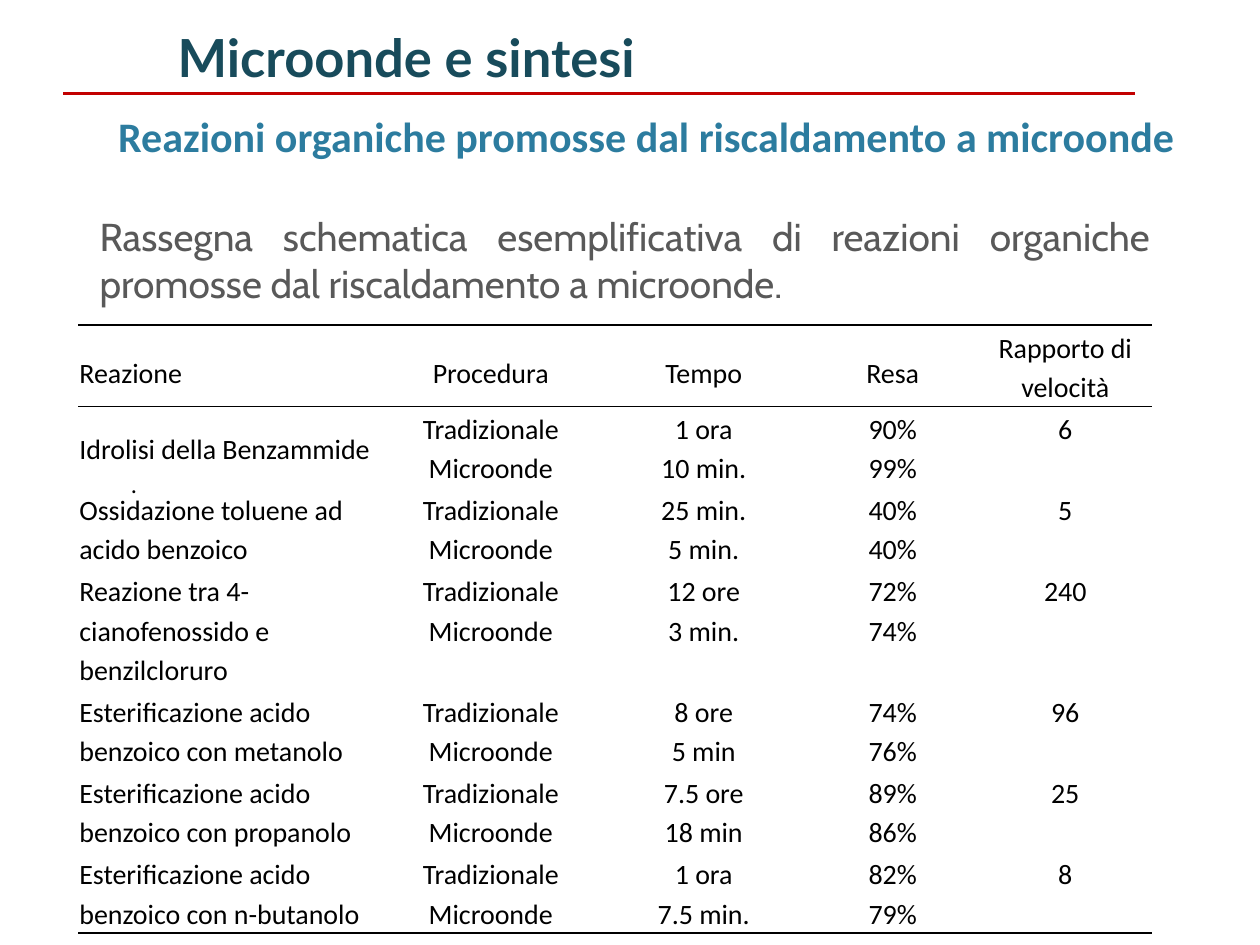
from lxml import etree
from pptx import Presentation
from pptx.dml.color import RGBColor
from pptx.enum.shapes import MSO_CONNECTOR
from pptx.enum.text import MSO_ANCHOR, MSO_AUTO_SIZE, PP_ALIGN
from pptx.oxml.ns import qn
from pptx.util import Inches, Pt

LEFT, CENTER, JUSTIFY = PP_ALIGN.LEFT, PP_ALIGN.CENTER, PP_ALIGN.JUSTIFY
TOP, MIDDLE, BOTTOM = MSO_ANCHOR.TOP, MSO_ANCHOR.MIDDLE, MSO_ANCHOR.BOTTOM
NO_FIT = MSO_AUTO_SIZE.NONE
STRAIGHT = MSO_CONNECTOR.STRAIGHT

HEADERS = ["Reazione", "Procedura", "Tempo", "Resa", "Rapporto di velocità"]
METHODS = "Tradizionale\nMicroonde"
REACTIONS = [
    ("Idrolisi della Benzammide", "1 ora\n10 min.", "90%\n99%", "6"),
    ("Ossidazione toluene ad acido benzoico", "25 min.\n5 min.", "40%\n40%", "5"),
    ("Reazione tra 4-cianofenossido e benzilcloruro", "12 ore\n3 min.", "72%\n74%", "240"),
    ("Esterificazione acido benzoico con metanolo", "8 ore\n5 min", "74%\n76%", "96"),
    ("Esterificazione acido benzoico con propanolo", "7.5 ore\n18 min", "89%\n86%", "25"),
    ("Esterificazione acido benzoico con n-butanolo", "1 ora\n7.5 min.", "82%\n79%", "8"),
]
COLUMN_WIDTHS = [2.4, 1.75, 1.63, 1.37, 1.37]
ROW_HEIGHTS = [0.55, 0.6] + [0.61] * 5


def rgb(color):
    return RGBColor.from_string(color)


def write(tf, text, size=16, color="000000", font="Calibri", bold=False,
          align=LEFT, spacing=None, after=None):
    """Fill the first paragraph; a newline becomes a line break."""
    p = tf.paragraphs[0]
    p.alignment = align
    if spacing:
        p.line_spacing = spacing
    if after:
        p.space_after = Pt(after)
    for i, line in enumerate(text.split("\n")):
        if i:
            p.add_line_break()
        r = p.add_run()
        r.text = line
        r.font.size = Pt(size)
        r.font.name = font
        r.font.bold = bold
        r.font.color.rgb = rgb(color)
    return p


def place(sp, box, anchor, wrap=True):
    sp.left, sp.top, sp.width, sp.height = (Inches(v) for v in box)
    tf = sp.text_frame
    tf.auto_size = NO_FIT
    tf.word_wrap = wrap
    tf.vertical_anchor = anchor
    return tf


def add_text(slide, box, text, wrap=True, **style):
    sp = slide.shapes.add_textbox(0, 0, 0, 0)
    write(place(sp, box, MIDDLE, wrap), text, **style)


def add_rule(slide, left, top, width):
    line = slide.shapes.add_connector(
        STRAIGHT, Inches(left), Inches(top), Inches(left + width), Inches(top))
    line.line.color.rgb = rgb("C20000")
    line.line.width = Pt(1.5)
    etree.SubElement(line._element.spPr, qn("a:effectLst"))


def add_title(slide, box):
    write(place(slide.shapes.title, box, BOTTOM),
          "Reazioni organiche promosse dal riscaldamento a microonde",
          size=24, color="2C7C9F", bold=True, align=CENTER)


def add_intro(slide, box):
    tf = place(slide.placeholders[1], box, TOP)
    pPr = tf.paragraphs[0]._p.get_or_add_pPr()
    pPr.set("marL", str(Inches(0.38)))
    pPr.set("indent", "0")
    etree.SubElement(pPr, qn("a:buNone"))
    p = write(tf, "Rassegna schematica esemplificativa di reazioni organiche "
              "promosse dal riscaldamento a microonde.",
              size=22.2, color="595959", font="Cabin", align=JUSTIFY)
    p.space_before = Pt(0)


def set_borders(cell, top, bottom):
    """Draw the black edges whose width in points is given; hide the others."""
    tcPr = cell._tc.get_or_add_tcPr()
    for side, width in (("L", 0), ("R", 0), ("T", top), ("B", bottom)):
        ln = etree.SubElement(tcPr, qn("a:ln" + side), w=str(Pt(width)))
        if width:
            fill = etree.SubElement(ln, qn("a:solidFill"))
            etree.SubElement(fill, qn("a:srgbClr"), val="000000")
        else:
            etree.SubElement(ln, qn("a:noFill"))


def add_reaction_table(slide, left, top):
    rows = [HEADERS] + [(name, METHODS, *rest) for name, *rest in REACTIONS]
    frame = slide.shapes.add_table(
        len(rows), len(HEADERS), Inches(left), Inches(top),
        Inches(sum(COLUMN_WIDTHS)), Inches(sum(ROW_HEIGHTS)))
    table = frame.table
    table.first_row = table.horz_banding = False
    for column, width in zip(table.columns, COLUMN_WIDTHS):
        column.width = Inches(width)
    for row, height in zip(table.rows, ROW_HEIGHTS):
        row.height = Inches(height)

    edges = {0: (1.5, 1), 1: (1, 0), len(rows) - 1: (0, 1.5)}
    for i, values in enumerate(rows):
        for j, value in enumerate(values):
            cell = table.cell(i, j)
            set_borders(cell, *edges.get(i, (0, 0)))
            if i == 0:
                cell.fill.solid()
                cell.fill.fore_color.rgb = rgb("FFFFFF")
            else:
                cell.fill.background()
            cell.margin_left = cell.margin_right = Inches(0.01)
            cell.margin_top = cell.margin_bottom = Inches(0.01)
            cell.vertical_anchor = MIDDLE if i == 0 or j == 0 else TOP
            tall = i == 0 and j < len(HEADERS) - 1
            write(cell.text_frame, value, align=CENTER if j else LEFT,
                  spacing=1.5 if tall else 1.15, after=10 if tall else 6)


def main():
    prs = Presentation()
    prs.slide_width, prs.slide_height = Inches(10), Inches(7.5)
    slide = prs.slides.add_slide(prs.slide_layouts[1])
    add_rule(slide, 0.5, 0.74, 8.51)
    add_text(slide, (1.12, 0.14, 4.21, 0.61), "Microonde e sintesi", wrap=False,
             size=30, color="184B5B", font="Lato", bold=True, align=CENTER)
    add_title(slide, (0.67, 0.25, 8.92, 1.08))
    add_intro(slide, (0.31, 1.64, 8.92, 0.78))
    add_reaction_table(slide, 0.62, 2.58)
    add_text(slide, (0.94, 3.67, 8.83, 0.34), ".", size=14)
    prs.save("out.pptx")


if __name__ == "__main__":
    main()
